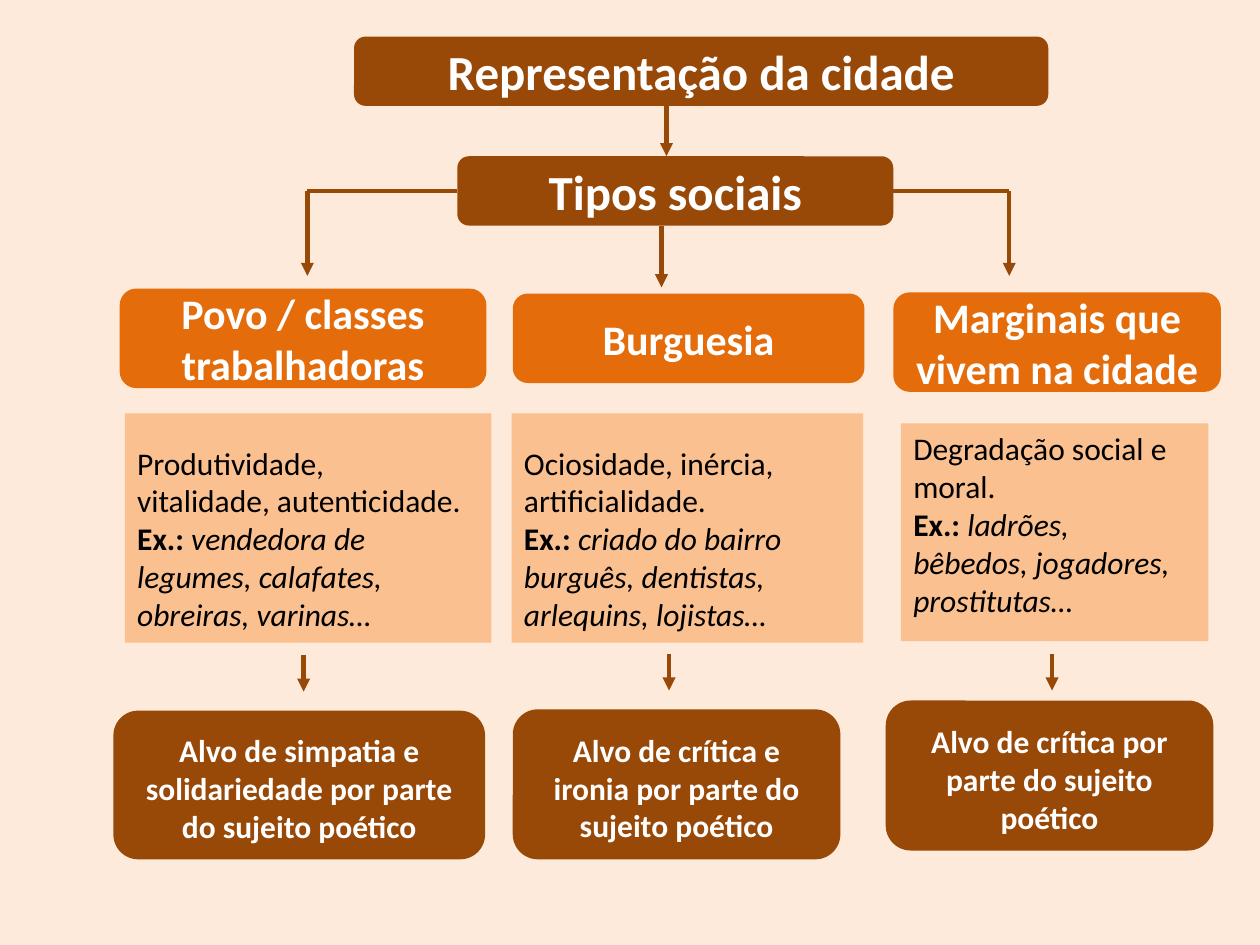
from dataclasses import dataclass

from lxml.etree import SubElement
from pptx import Presentation
from pptx.dml.color import RGBColor
from pptx.enum.shapes import MSO_CONNECTOR, MSO_SHAPE
from pptx.enum.text import MSO_ANCHOR, PP_ALIGN
from pptx.oxml.ns import qn
from pptx.util import Inches, Pt


@dataclass(frozen=True)
class Theme:
    font: str = "Calibri"
    background: str = "FDEADA"
    brown: str = "984807"
    orange: str = "E46C0A"
    peach: str = "FAC090"
    white: str = "FFFFFF"
    black: str = "000000"
    title_size: int = 28
    heading_size: int = 24
    body_size: int = 18
    line_width: float = 2.5


@dataclass(frozen=True)
class Box:
    left: float
    top: float
    width: float
    height: float

    def inside(self, left, top, width, height):
        return Box(self.left + left, self.top + top, width, height)


THEME = Theme()
TREE_BOX = Box(2.44, 0.29, 5.88, 1.99)

# Each part is placed relative to the column: left, top, width, height
COLUMNS = [
    dict(
        box=Box(0.9, 2.29, 3, 4.53),
        heading=("Povo / classes trabalhadoras", (0.05, 0, 2.91, 0.79)),
        panel=(0.09, 0.99, 2.91, 1.82),
        panel_inset=0.24,
        traits=["Produtividade,", "vitalidade, autenticidade."],
        examples=["vendedora de", "legumes, calafates,", "obreiras, varinas…"],
        arrow=(1.51, 2.91),
        verdict=(["Alvo de simpatia e", "solidariedade por parte", "do sujeito poético"],
                 (0, 3.35, 2.95, 1.18)),
    ),
    dict(
        box=Box(4.06, 2.29, 2.8, 4.53),
        heading=("Burguesia", (0.01, 0.04, 2.79, 0.71)),
        panel=(0, 0.99, 2.79, 1.82),
        panel_inset=0.24,
        traits=["Ociosidade, inércia,", "artificialidade."],
        examples=["criado do bairro", "burguês, dentistas,", "arlequins, lojistas…"],
        arrow=(1.25, 2.9),
        verdict=(["Alvo de crítica e ironia por parte do sujeito poético"],
                 (0.01, 3.34, 2.6, 1.19)),
    ),
    dict(
        box=Box(7.03, 2.29, 2.66, 4.53),
        heading=("Marginais que vivem na cidade", (0.06, 0.03, 2.6, 0.79)),
        panel=(0.12, 1.07, 2.44, 1.73),
        panel_inset=0.05,
        traits=["Degradação social e moral."],
        examples=["ladrões,", "bêbedos, jogadores,", "prostitutas…"],
        arrow=(1.32, 2.9),
        verdict=(["Alvo de crítica por parte do sujeito poético"],
                 (0, 3.27, 2.6, 1.19)),
    ),
]


def add_block(slide, box, preset, fill, top_inset=0.05):
    shape = slide.shapes.add_shape(preset, Inches(box.left), Inches(box.top),
                                   Inches(box.width), Inches(box.height))
    shape.shadow.inherit = False
    shape.fill.solid()
    shape.fill.fore_color.rgb = RGBColor.from_string(fill)
    shape.line.fill.background()
    shape.text_frame.word_wrap = True
    shape.text_frame.margin_top = Inches(top_inset)
    return shape


def write_paragraphs(shape, paragraphs, size, color, alignment, anchor):
    """Each paragraph is a list of (text, bold, italic) runs."""
    frame = shape.text_frame
    frame.vertical_anchor = anchor
    for index, runs in enumerate(paragraphs):
        paragraph = frame.add_paragraph() if index else frame.paragraphs[0]
        paragraph.alignment = alignment
        for text, bold, italic in runs:
            run = paragraph.add_run()
            run.text = text
            run.font.name = THEME.font
            run.font.size = Pt(size)
            run.font.bold = bold
            run.font.italic = italic
            run.font.color.rgb = RGBColor.from_string(color)


def add_label(slide, box, lines, size, fill, top_inset=0.05):
    shape = add_block(slide, box, MSO_SHAPE.ROUNDED_RECTANGLE, fill, top_inset)
    write_paragraphs(shape, [[(line, True, False)] for line in lines], size,
                     THEME.white, PP_ALIGN.CENTER, MSO_ANCHOR.MIDDLE)
    return shape


def add_line(slide, start, end, arrow=True):
    line = slide.shapes.add_connector(MSO_CONNECTOR.STRAIGHT,
                                      *(Inches(value) for value in (*start, *end)))
    line.line.color.rgb = RGBColor.from_string(THEME.brown)
    line.line.width = Pt(THEME.line_width)
    if arrow:
        SubElement(line.line._get_or_add_ln(), qn("a:tailEnd"), type="triangle")
    SubElement(line._element.spPr, qn("a:effectLst"))
    return line


def add_tree(slide, box):
    # Title and branching node
    title = box.inside(0.37, 0, 5.51, 0.55)
    node = box.inside(1.19, 0.95, 3.46, 0.55)
    add_label(slide, title, ["Representação da cidade"], THEME.title_size, THEME.brown)
    node_shape = add_label(slide, node, ["Tipos sociais"], THEME.title_size, THEME.brown)

    # Central arrows
    title_x, node_x = box.left + 2.85, box.left + 2.81
    add_line(slide, (title_x, title.top + title.height), (title_x, node.top))
    add_line(slide, (node_x, node.top + node.height), (node_x, box.top + box.height))

    # Side branches, each a rail from the node and an arrow down
    rail_y = node.top + node.height / 2
    for site, node_edge, branch_x in [(1, node.left, box.left),
                                      (3, node.left + node.width, box.left + 5.57)]:
        rail = add_line(slide, (node_edge, rail_y), (branch_x, rail_y), arrow=False)
        rail.begin_connect(node_shape, site)
        add_line(slide, (branch_x, rail_y), (branch_x, box.top + 1.9))


def add_column(slide, box, column):
    # Social type
    heading, place = column["heading"]
    add_label(slide, box.inside(*place), [heading], THEME.heading_size, THEME.orange)

    # Traits and examples
    panel = add_block(slide, box.inside(*column["panel"]), MSO_SHAPE.RECTANGLE,
                      THEME.peach, column["panel_inset"])
    first_example, *other_examples = column["examples"]
    paragraphs = [[(trait, False, False)] for trait in column["traits"]]
    paragraphs.append([("Ex.: ", True, False), (first_example, False, True)])
    paragraphs += [[(example, False, True)] for example in other_examples]
    write_paragraphs(panel, paragraphs, THEME.body_size, THEME.black,
                     PP_ALIGN.LEFT, MSO_ANCHOR.TOP)

    # Arrow to the poet's attitude
    x, y = box.left + column["arrow"][0], box.top + column["arrow"][1]
    add_line(slide, (x, y), (x, y + 0.29))
    lines, place = column["verdict"]
    add_label(slide, box.inside(*place), lines, THEME.body_size, THEME.brown, 0.1)


def main():
    presentation = Presentation()
    presentation.slide_width = Inches(10)
    presentation.slide_height = Inches(7.5)
    slide = presentation.slides.add_slide(presentation.slide_layouts[6])
    slide.background.fill.solid()
    slide.background.fill.fore_color.rgb = RGBColor.from_string(THEME.background)
    add_tree(slide, TREE_BOX)
    for column in COLUMNS:
        add_column(slide, column["box"], column)
    presentation.save("out.pptx")


if __name__ == "__main__":
    main()
